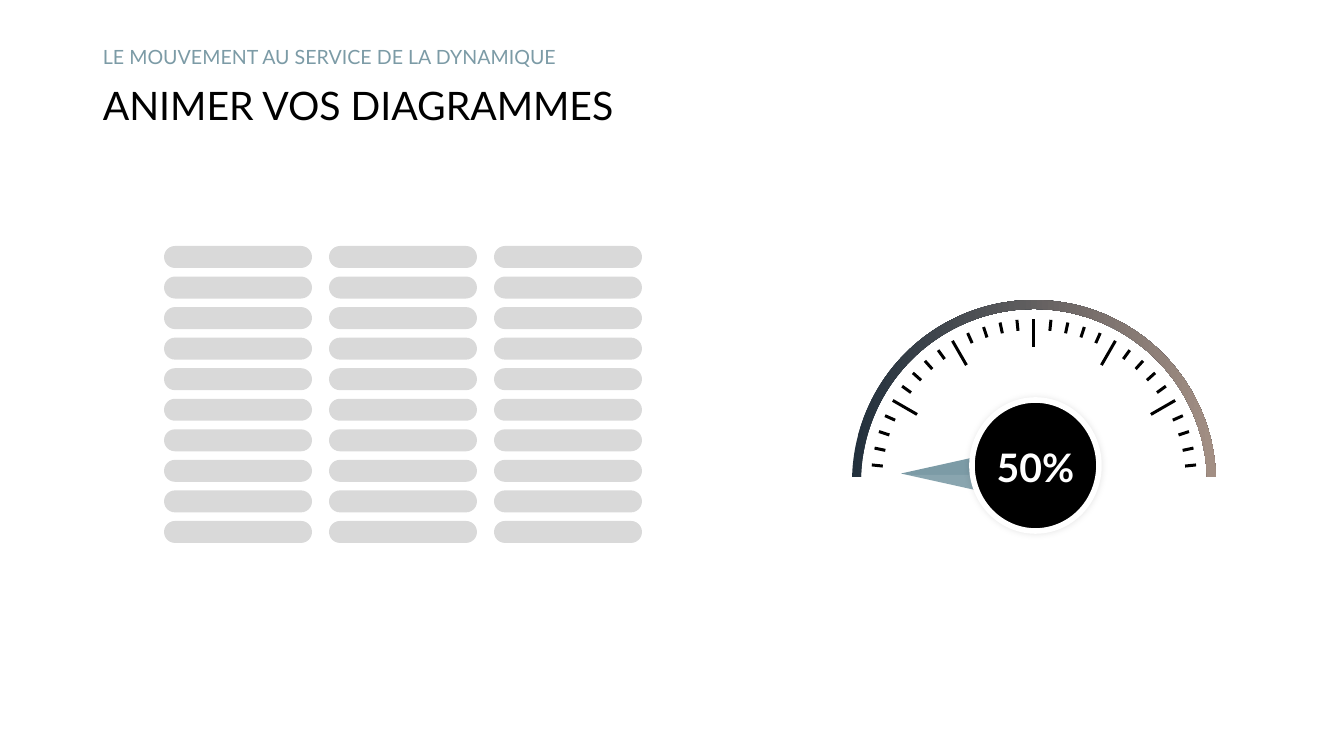
from dataclasses import dataclass
from math import asin, cos, degrees, radians, sin

from lxml.etree import SubElement
from pptx import Presentation
from pptx.dml.color import RGBColor
from pptx.enum.shapes import MSO_SHAPE
from pptx.enum.text import MSO_ANCHOR, PP_ALIGN
from pptx.oxml.ns import qn
from pptx.util import Emu, Pt

EMU_PER_PX = 914400 / 100.8


@dataclass(frozen=True)
class Theme:
    font: str = "Lato"
    black: str = "000000"
    white: str = "FFFFFF"
    accent: str = "7C9BA6"
    pill: str = "D9D9D9"
    arc_start: str = "22303C"
    arc_end: str = "A38F84"
    title_size: int = 28
    subtitle_size: int = 14
    value_size: int = 28


THEME = Theme()
DIAL_CENTER = (1034, 482)
TICK_OUTER, MAJOR_INNER, MINOR_INNER = 163, 135, 152
TICK_WIDTH = 3
ARC_OUTER, ARC_INNER, ARC_LIFT = 182, 173, 5


def px(value):
    return Emu(round(value * EMU_PER_PX))


def add_text(slide, box, text, size, color, bold=False,
             align=PP_ALIGN.LEFT, anchor=MSO_ANCHOR.MIDDLE, spacing=None):
    frame = slide.shapes.add_textbox(*map(px, box)).text_frame
    frame.word_wrap = True
    frame.vertical_anchor = anchor
    paragraph = frame.paragraphs[0]
    paragraph.alignment = align
    if spacing:
        paragraph.line_spacing = spacing
    run = paragraph.add_run()
    run.text = text
    run.font.name = THEME.font
    run.font.size = Pt(size)
    run.font.bold = bold
    run.font.color.rgb = RGBColor.from_string(color)


def paint(shape, color):
    """Give a shape a solid fill, no line and no shadow."""
    shape.shadow.inherit = False
    shape.fill.solid()
    shape.fill.fore_color.rgb = RGBColor.from_string(color)
    shape.line.fill.background()
    return shape


def add_preset(slide, kind, box, color):
    return paint(slide.shapes.add_shape(kind, *map(px, box)), color)


def add_outline(slide, points, color):
    points = [(px(x), px(y)) for x, y in points]
    builder = slide.shapes.build_freeform(*points[0])
    builder.add_line_segments(points[1:], close=True)
    return paint(builder.convert_to_shape(), color)


def dial_point(radius, angle, offset=0):
    """Point at an angle in degrees, moved sideways by offset px."""
    across, up = cos(radians(angle)), sin(radians(angle))
    return (DIAL_CENTER[0] + radius * across - offset * up,
            DIAL_CENTER[1] - radius * up - offset * across)


def add_pills(slide):
    columns, rows = 3, 10
    for column in range(columns):
        for row in range(rows):
            box = (164 + 165 * column, 246 + 275 * row / (rows - 1), 148, 22)
            pill = add_preset(slide, MSO_SHAPE.ROUNDED_RECTANGLE, box, THEME.pill)
            pill.adjustments[0] = 0.5


def add_needle(slide):
    needle = add_preset(slide, MSO_SHAPE.ISOSCELES_TRIANGLE,
                        (938, 407, 59, 133), THEME.accent)
    needle.rotation = 270
    highlight = add_preset(slide, MSO_SHAPE.ISOSCELES_TRIANGLE,
                           (954, 423, 29, 133), THEME.white)
    highlight.rotation = 270
    highlight.adjustments[0] = 1
    color = highlight.fill._xPr.find(f"{qn('a:solidFill')}/{qn('a:srgbClr')}")
    SubElement(color, qn("a:alpha"), val="10000")


def arc_edge(radius, steps=90):
    """Points from right to left, ending on the level ARC_LIFT above the centre."""
    start = degrees(asin(ARC_LIFT / radius))
    sweep = 180 - 2 * start
    return [dial_point(radius, start + sweep * step / steps)
            for step in range(steps + 1)]


def add_arc(slide):
    points = arc_edge(ARC_OUTER) + arc_edge(ARC_INNER)[::-1]
    arc = add_outline(slide, points, THEME.arc_start)
    arc.fill.gradient()
    arc.fill.gradient_angle = 0
    colors = (THEME.arc_start, THEME.arc_end)
    for position, (stop, color) in enumerate(zip(arc.fill.gradient_stops, colors)):
        stop.position = position
        stop.color.rgb = RGBColor.from_string(color)


def add_ticks(slide):
    half = TICK_WIDTH / 2
    for angle in range(6, 180, 6):
        inner = MINOR_INNER if angle % 30 else MAJOR_INNER
        corners = ((inner, -half), (TICK_OUTER, -half),
                   (TICK_OUTER, half), (inner, half))
        points = [dial_point(radius, angle, offset) for radius, offset in corners]
        add_outline(slide, points, THEME.black)


def add_hub(slide):
    hub = add_preset(slide, MSO_SHAPE.OVAL, (972, 400, 127, 131), THEME.black)
    hub.line.color.rgb = RGBColor.from_string(THEME.white)
    hub.line.width = Pt(4)
    effects = hub._element.spPr.find(qn("a:effectLst"))
    shadow = SubElement(effects, qn("a:outerShdw"), blurRad=str(Pt(5)),
                        dist="0", dir="0", algn="ctr", rotWithShape="0")
    color = SubElement(shadow, qn("a:srgbClr"), val=THEME.black)
    SubElement(color, qn("a:alpha"), val="10000")
    add_text(slide, (973, 438, 125, 57), "50%", THEME.value_size, THEME.white,
             bold=True, align=PP_ALIGN.CENTER, anchor=MSO_ANCHOR.TOP)


def main():
    presentation = Presentation()
    presentation.slide_width, presentation.slide_height = px(1344), px(756)
    slide = presentation.slides.add_slide(presentation.slide_layouts[6])
    add_text(slide, (93, 79, 1159, 57), "ANIMER VOS DIAGRAMMES",
             THEME.title_size, THEME.black, spacing=0.9)
    add_text(slide, (93, 40, 1159, 36), "LE MOUVEMENT AU SERVICE DE LA DYNAMIQUE",
             THEME.subtitle_size, THEME.accent, spacing=0.9)
    add_pills(slide)
    add_needle(slide)
    add_arc(slide)
    add_ticks(slide)
    add_hub(slide)
    presentation.save("out.pptx")


if __name__ == "__main__":
    main()
